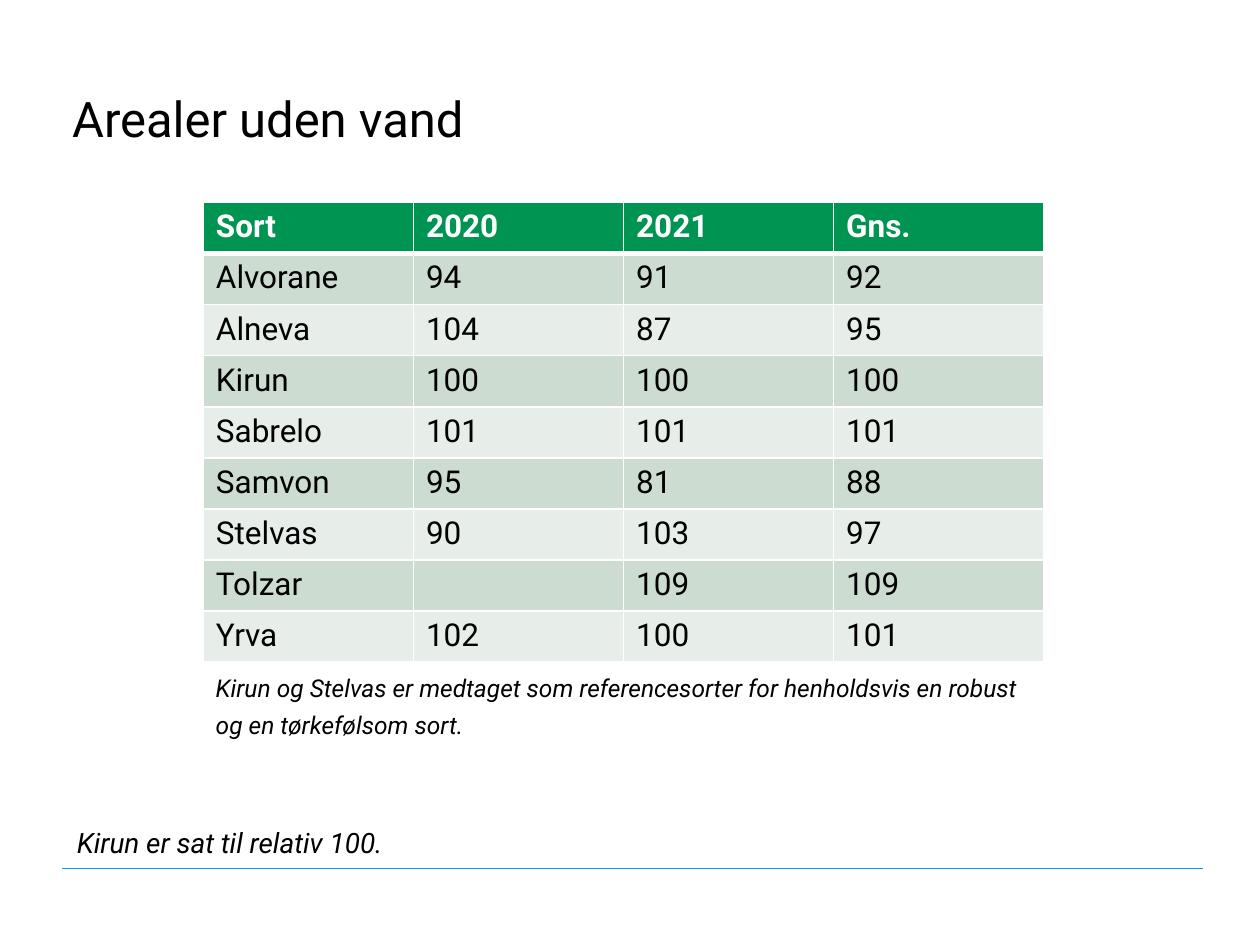
from dataclasses import dataclass

from lxml import etree
from pptx import Presentation
from pptx import util as u
from pptx.dml import color as c
from pptx.enum import shapes, text
from pptx.oxml import ns


@dataclass(frozen=True)
class Theme:
    font: str = "Roboto"
    ink: str = "000000"
    white: str = "FFFFFF"
    header: str = "009453"
    bands: tuple[str, str] = ("CCDCD1", "E7EEE9")
    rule: str = "009FE3"
    title_size: int = 28
    table_size: int = 18
    note_size: int = 16
    caption_size: int = 14


@dataclass(frozen=True)
class Variety:
    name: str
    first_year: str
    second_year: str
    average: str

    def values(self) -> tuple[str, ...]:
        return self.name, self.first_year, self.second_year, self.average


@dataclass(frozen=True)
class Remark:
    wording: str
    left: float
    top: float
    width: float
    height: float
    size: int
    inset: float
    spacing: int | None = None


THEME = Theme()
HEADINGS = Variety("Sort", "2020", "2021", "Gns.")
VARIETIES = (
    Variety("Alvorane", "94", "91", "92"),
    Variety("Alneva", "104", "87", "95"),
    Variety("Kirun", "100", "100", "100"),
    Variety("Sabrelo", "101", "101", "101"),
    Variety("Samvon", "95", "81", "88"),
    Variety("Stelvas", "90", "103", "97"),
    Variety("Tolzar", "", "109", "109"),
    Variety("Yrva", "102", "100", "101"),
)
REMARKS = (
    Remark(
        "Kirun og Stelvas er medtaget som referencesorter for henholdsvis "
        "en robust og en tørkefølsom sort.",
        4.1, 13.42, 16.94, 1.6, THEME.caption_size, 0, 21,
    ),
    Remark("Kirun er sat til relativ 100.", 1.3, 16.52, 22, 0.94, THEME.note_size, 0.13),
)


def add_run(paragraph, wording: str, size: int, color: str = THEME.ink,
            bold: bool = False, italic: bool = False) -> None:
    run = paragraph.add_run()
    run.text = wording
    run.font.name = THEME.font
    run.font.size = u.Pt(size)
    run.font.bold = bold
    run.font.italic = italic
    run.font.color.rgb = c.RGBColor.from_string(color)


def set_borders(cell, top: int, bottom: int) -> None:
    properties = cell._tc.get_or_add_tcPr()
    widths = {"a:lnL": 1, "a:lnR": 1, "a:lnT": top, "a:lnB": bottom}
    for position, (side, width) in enumerate(widths.items()):
        border = etree.Element(ns.qn(side), w=str(u.Pt(width)))
        fill = etree.SubElement(border, ns.qn("a:solidFill"))
        etree.SubElement(fill, ns.qn("a:srgbClr"), val=THEME.white)
        properties.insert(position, border)


def add_title(slide) -> None:
    title = slide.shapes.title
    title.left, title.top = u.Cm(1.2), u.Cm(1.65)
    title.width, title.height = u.Cm(23.2), u.Cm(1.45)
    frame = title.text_frame
    frame.vertical_anchor = text.MSO_ANCHOR.MIDDLE
    heading = frame.paragraphs[0]
    heading.alignment = text.PP_ALIGN.LEFT
    add_run(heading, "Arealer uden vand", THEME.title_size)


def add_yields(slide) -> None:
    rows = (HEADINGS, *VARIETIES)
    columns = len(HEADINGS.values())
    row_height = u.Cm(1.03)
    yields = slide.shapes.add_table(
        len(rows), columns, u.Cm(4.1), u.Cm(4.08), u.Cm(16.94), row_height * len(rows)
    ).table
    yields.first_row = True
    yields.horz_banding = False
    for index, variety in enumerate(rows):
        yields.rows[index].height = row_height
        is_header = index == 0
        background = THEME.header if is_header else THEME.bands[(index - 1) % 2]
        for column, value in enumerate(variety.values()):
            cell = yields.cell(index, column)
            cell.fill.solid()
            cell.fill.fore_color.rgb = c.RGBColor.from_string(background)
            set_borders(cell, 3 if index == 1 else 1, 3 if is_header else 1)
            if value:
                add_run(cell.text_frame.paragraphs[0], value, THEME.table_size,
                        THEME.white if is_header else THEME.ink, bold=is_header)


def add_remark(slide, remark: Remark) -> None:
    frame = slide.shapes.add_textbox(
        u.Cm(remark.left), u.Cm(remark.top), u.Cm(remark.width), u.Cm(remark.height)
    ).text_frame
    frame.word_wrap = True
    frame.margin_top = frame.margin_bottom = u.Cm(remark.inset)
    paragraph = frame.paragraphs[0]
    if remark.spacing:
        paragraph.line_spacing = u.Pt(remark.spacing)
    add_run(paragraph, remark.wording, remark.size, italic=True)


def add_footer_rule(slide) -> None:
    rule = slide.shapes.add_connector(
        shapes.MSO_CONNECTOR.STRAIGHT, u.Cm(1.25), u.Cm(17.5), u.Cm(24.25), u.Cm(17.5)
    )
    rule.line.color.rgb = c.RGBColor.from_string(THEME.rule)
    rule.line.width = u.Pt(0.3)
    etree.SubElement(rule._element.spPr, ns.qn("a:effectLst"))


def main() -> None:
    deck = Presentation()
    deck.slide_width, deck.slide_height = u.Cm(25.4), u.Cm(19.05)
    slide = deck.slides.add_slide(deck.slide_layouts[5])
    add_footer_rule(slide)
    add_title(slide)
    for remark in REMARKS:
        add_remark(slide, remark)
    add_yields(slide)
    deck.save("out.pptx")


if __name__ == "__main__":
    main()
